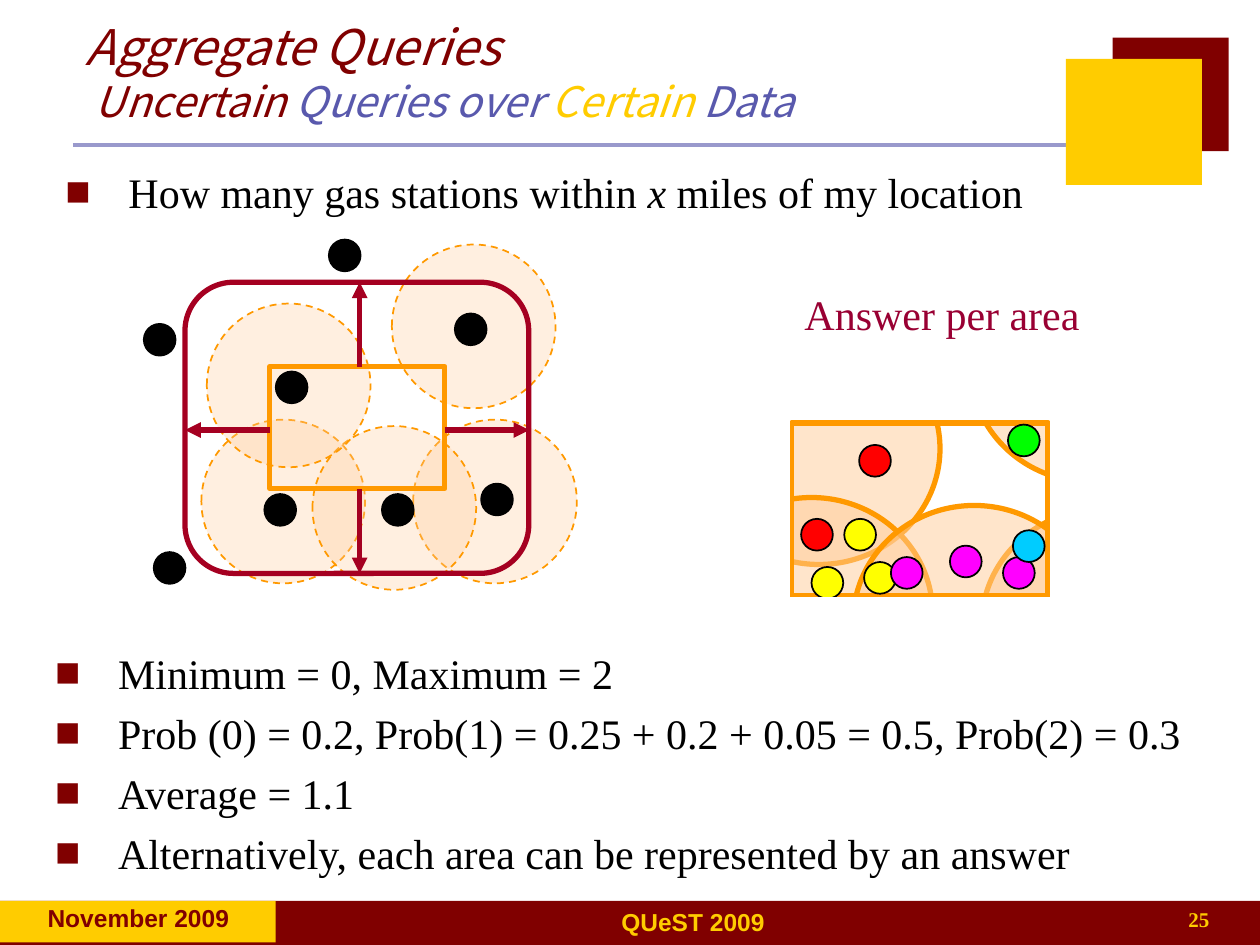
from dataclasses import dataclass
from typing import Optional

from lxml.etree import SubElement
from pptx import Presentation
from pptx.dml.color import RGBColor
from pptx.enum.dml import MSO_LINE_DASH_STYLE as Dash
from pptx.enum.shapes import MSO_CONNECTOR_TYPE as Connector, MSO_SHAPE as Shape
from pptx.enum.text import MSO_ANCHOR as Anchor, MSO_AUTO_SIZE as AutoSize, PP_ALIGN as Align
from pptx.oxml.ns import qn
from pptx.util import Cm, Pt

BLACK = RGBColor(0x00, 0x00, 0x00)
WHITE = RGBColor(0xFF, 0xFF, 0xFF)
MAROON = RGBColor(0x80, 0x00, 0x00)
GOLD = RGBColor(0xFF, 0xCC, 0x00)
LAVENDER = RGBColor(0x99, 0x99, 0xCC)
INDIGO = RGBColor(0x59, 0x59, 0xAD)
PEACH = RGBColor(0xFF, 0xCC, 0x99)
ORANGE = RGBColor(0xFF, 0x99, 0x00)
CRIMSON = RGBColor(0xA5, 0x00, 0x21)
WINE = RGBColor(0x99, 0x00, 0x33)
RED = RGBColor(0xFF, 0x00, 0x00)
YELLOW = RGBColor(0xFF, 0xFF, 0x00)
MAGENTA = RGBColor(0xFF, 0x00, 0xFF)
GREEN = RGBColor(0x00, 0xFF, 0x00)
CYAN = RGBColor(0x00, 0xCC, 0xFF)

SERIF, SANS, TITLE_FONT = "Times New Roman", "Arial", "Noto Sans CJK KR"
DOT = 0.64


@dataclass(frozen=True)
class Box:
    """Left, top, width and height in centimetres."""
    left: float
    top: float
    width: float
    height: float

    def lengths(self) -> tuple:
        return Cm(self.left), Cm(self.top), Cm(self.width), Cm(self.height)


@dataclass(frozen=True)
class Look:
    fill: Optional[RGBColor] = None
    line: Optional[RGBColor] = None
    weight: float = 1
    opacity: int = 100
    dashed: bool = False


@dataclass(frozen=True)
class TextStyle:
    size: float
    color: RGBColor
    font: str = SERIF
    bold: bool = False
    italic: bool = False


RANGE = Look(PEACH, ORANGE, 1, 30, True)
ZOOMED_RANGE = Look(PEACH, ORANGE, 3, 50)
QUERY = Look(line=ORANGE, weight=3)
MASK = Look(WHITE, WHITE, 3)
BODY = TextStyle(24, BLACK)


def draw_shape(slide, kind, box: Box, look: Look):
    shape = slide.shapes.add_shape(kind, *box.lengths())
    shape.shadow.inherit = False
    if look.fill is None:
        shape.fill.background()
    else:
        shape.fill.solid()
        shape.fill.fore_color.rgb = look.fill
        if look.opacity < 100:
            color = shape.fill._xPr.find(".//" + qn("a:srgbClr"))
            SubElement(color, qn("a:alpha"), val=str(look.opacity * 1000))
    if look.line is None:
        shape.line.fill.background()
    else:
        shape.line.color.rgb = look.line
        shape.line.width = Pt(look.weight)
        if look.dashed:
            shape.line.dash_style = Dash.DASH
    return shape


def draw_line(slide, start: tuple, end: tuple, color: RGBColor, weight: float,
              arrow: bool = False) -> None:
    line = slide.shapes.add_connector(Connector.STRAIGHT, *map(Cm, start + end))
    line.line.color.rgb = color
    line.line.width = Pt(weight)
    if arrow:
        SubElement(line.line._get_or_add_ln(), qn("a:tailEnd"), type="triangle")
    SubElement(line._element.spPr, qn("a:effectLst"))


def format_run(run, style: TextStyle) -> None:
    font = run.font
    font.name, font.size, font.color.rgb = style.font, Pt(style.size), style.color
    font.bold, font.italic = style.bold, style.italic


def draw_text(slide, box: Box, text: str, style: TextStyle, align=Align.LEFT,
              bulleted: bool = False):
    frame = slide.shapes.add_textbox(*box.lengths()).text_frame
    frame.word_wrap = True
    frame.text = text
    for index, paragraph in enumerate(frame.paragraphs):
        paragraph.alignment = align
        if index:
            paragraph.space_before = Pt(5.5)
        if bulleted:
            add_bullet(paragraph)
        for run in paragraph.runs:
            format_run(run, style)
    return frame


def add_bullet(paragraph) -> None:
    props = paragraph._p.get_or_add_pPr()
    props.set("marL", str(Cm(1.27)))
    props.set("indent", str(-Cm(1.27)))
    color = SubElement(props, qn("a:buClr"))
    SubElement(color, qn("a:srgbClr"), val=str(MAROON))
    SubElement(props, qn("a:buFont"), typeface=SERIF)
    SubElement(props, qn("a:buChar"), char="■")


def draw_decoration(slide) -> None:
    draw_line(slide, (1.47, 2.92), (21.59, 2.92), LAVENDER, 2.25)
    for box, color in [(Box(0, 18.16, 25.4, 0.89), MAROON), (Box(0, 18.16, 5.56, 0.84), GOLD),
                       (Box(22.43, 0.76, 2.34, 2.29), MAROON), (Box(21.49, 1.19, 2.74, 2.54), GOLD)]:
        draw_shape(slide, Shape.RECTANGLE, box, Look(color))
    draw_text(slide, Box(4.8, 18.16, 18.34, 0.84), "QUeST 2009",
              TextStyle(14, GOLD, SANS, bold=True), Align.CENTER)
    draw_text(slide, Box(0.3, 18.08, 4.98, 0.84), "November 2009",
              TextStyle(14, MAROON, SANS, bold=True), Align.CENTER)
    draw_text(slide, Box(19.35, 18.16, 5.28, 0.84), "25",
              TextStyle(12, GOLD, bold=True), Align.RIGHT)


def fill_title(slide) -> None:
    title = slide.shapes.title
    title.left, title.top, title.width, title.height = Box(1.47, 0.15, 19.48, 2.57).lengths()
    frame = title.text_frame
    frame.auto_size = AutoSize.NONE
    frame.vertical_anchor = Anchor.MIDDLE
    frame.text = "Aggregate Queries"
    heading = frame.paragraphs[0]
    heading.alignment = Align.LEFT
    format_run(heading.runs[0], TextStyle(28, MAROON, TITLE_FONT, italic=True))
    heading.add_line_break()
    for words, color in [(" Uncertain ", MAROON), ("Queries over ", INDIGO),
                         ("Certain", GOLD), (" Data", INDIGO)]:
        run = heading.add_run()
        run.text = words
        format_run(run, TextStyle(24, color, TITLE_FONT, italic=True))


def draw_question(slide) -> None:
    frame = draw_text(slide, Box(1.07, 3.23, 24.33, 1.7), "How many gas stations within ",
                      BODY, bulleted=True)
    for words, italic in [("x", True), (" miles of my location", False)]:
        run = frame.paragraphs[0].add_run()
        run.text = words
        format_run(run, TextStyle(24, BLACK, italic=italic))


def draw_query_map(slide) -> None:
    for left, top in [(7.9, 4.93), (4.06, 8.46), (8.33, 8.46), (6.3, 8.59), (4.17, 6.12)]:
        draw_shape(slide, Shape.OVAL, Box(left, top, 3.3, 3.3), RANGE)
    draw_shape(slide, Shape.RECTANGLE, Box(5.44, 7.39, 3.53, 2.46), QUERY)
    for left, top in [(2.9, 6.53), (9.17, 6.32), (6.63, 4.83), (9.7, 9.75),
                      (7.7, 9.96), (5.56, 7.49), (3.1, 11.13), (5.33, 9.96)]:
        draw_shape(slide, Shape.OVAL, Box(left, top, DOT, DOT), Look(BLACK, BLACK))
    # Arrows from the query rectangle out to the expanded region
    for start, end in [((8.97, 8.67), (10.67, 8.67)), ((5.44, 8.67), (3.73, 8.67)),
                       ((7.25, 9.86), (7.25, 11.56)), ((7.25, 7.39), (7.25, 5.69))]:
        draw_line(slide, start, end, CRIMSON, 3, arrow=True)
    draw_shape(slide, Shape.ROUNDED_RECTANGLE, Box(3.73, 5.69, 6.93, 5.87),
               Look(line=CRIMSON, weight=3))


def draw_answer_areas(slide) -> None:
    for left, top in [(14.07, 6.71), (19.56, 5.05), (13.92, 10.03), (19.79, 10.26), (17.2, 10.19)]:
        draw_shape(slide, Shape.OVAL, Box(left, top, 4.88, 4.67), ZOOMED_RANGE)
    draw_shape(slide, Shape.RECTANGLE, Box(13.87, 4.72, 10.77, 3.71), MASK)
    draw_text(slide, Box(15.09, 5.69, 7.8, 1.6), "Answer per area", TextStyle(24, WINE), Align.CENTER)
    draw_shape(slide, Shape.RECTANGLE, Box(15.95, 8.53, 5.18, 3.48), QUERY)
    for left, top, color in [(16.15, 10.46, RED), (17.02, 10.46, YELLOW), (20.22, 11.23, MAGENTA),
                             (20.32, 8.56, GREEN), (17.32, 8.97, RED), (16.36, 11.43, YELLOW),
                             (17.42, 11.33, YELLOW), (17.96, 11.23, MAGENTA),
                             (19.15, 11.0, MAGENTA), (20.42, 10.69, CYAN)]:
        draw_shape(slide, Shape.OVAL, Box(left, top, DOT, DOT), Look(color, BLACK))
    # White masks trim the circles to the query rectangle
    for box in [Box(13.87, 12.09, 11.53, 3.53), Box(21.23, 7.39, 3.4, 5.13),
                Box(13.34, 7.82, 2.54, 5.13)]:
        draw_shape(slide, Shape.RECTANGLE, box, MASK)


def main() -> None:
    deck = Presentation()
    deck.slide_width, deck.slide_height = Cm(25.4), Cm(19.05)
    slide = deck.slides.add_slide(deck.slide_layouts[5])
    draw_decoration(slide)
    fill_title(slide)
    draw_question(slide)
    draw_query_map(slide)
    draw_answer_areas(slide)
    answers = ["Minimum = 0, Maximum = 2",
               "Prob (0) = 0.2, Prob(1) = 0.25 + 0.2 + 0.05 = 0.5, Prob(2) = 0.3",
               "Average = 1.1",
               "Alternatively, each area can be represented by an answer"]
    draw_text(slide, Box(0.86, 12.93, 23.57, 4.27), "\n".join(answers), BODY, bulleted=True)
    deck.save("out.pptx")


if __name__ == "__main__":
    main()
